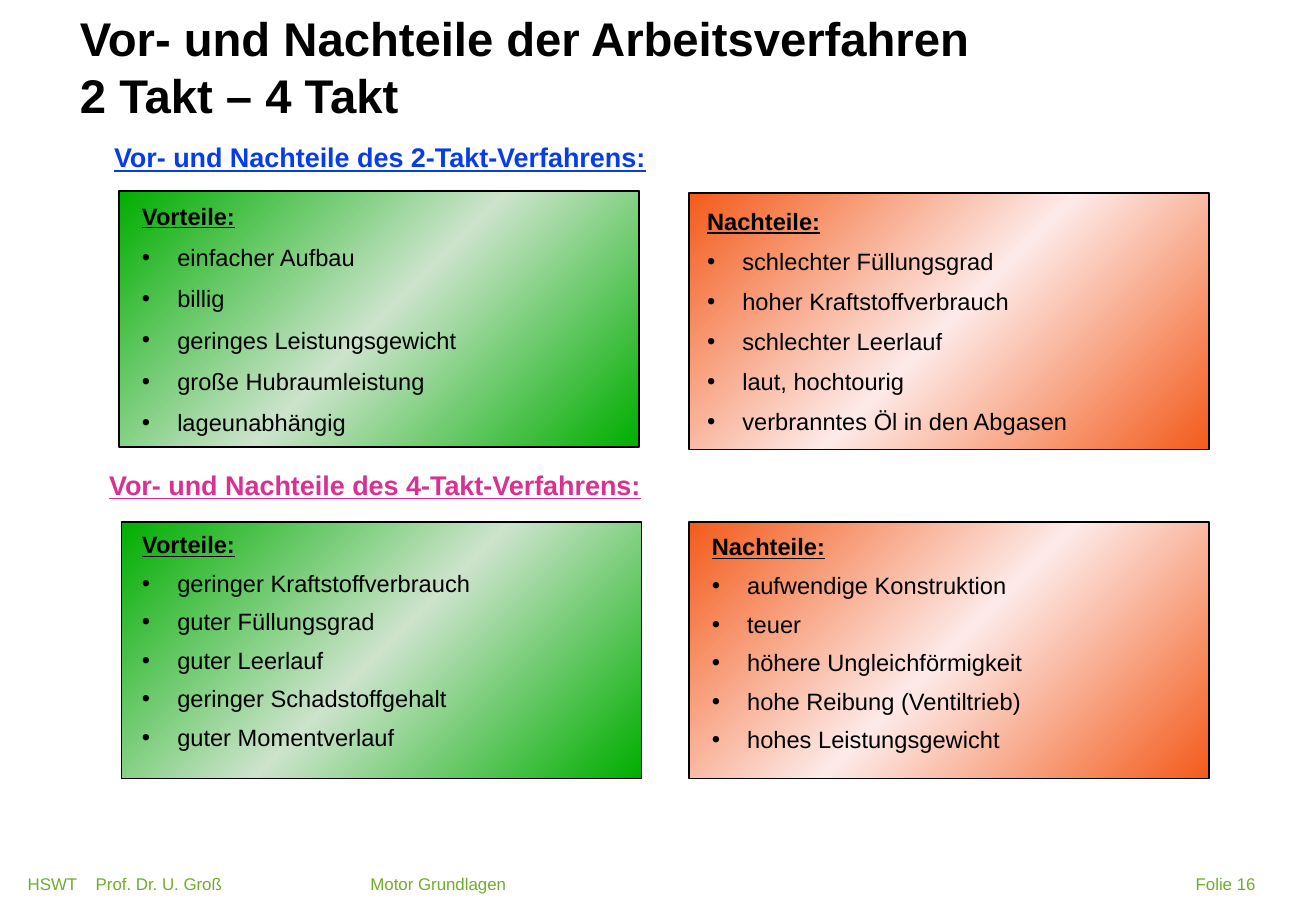
from copy import deepcopy

from lxml import etree
from pptx import Presentation
from pptx.dml.color import RGBColor
from pptx.enum.shapes import MSO_SHAPE
from pptx.enum.text import MSO_ANCHOR, PP_ALIGN
from pptx.oxml.ns import qn
from pptx.util import Inches, Pt

RECTANGLE = MSO_SHAPE.RECTANGLE
TOP, MIDDLE = MSO_ANCHOR.TOP, MSO_ANCHOR.MIDDLE
LEFT, RIGHT = PP_ALIGN.LEFT, PP_ALIGN.RIGHT

FONT = "Arial"
BLACK, BLUE, PINK, FOOTER_GREEN = "000000", "063DE8", "D93192", "71AD2A"
GREEN_GRADIENT = ("00AE00", "CCE3CC", "00AE00")
ORANGE_GRADIENT = ("F35B1B", "FDEAE8", "F35B1B")
PANEL_WIDTH, PANEL_HEIGHT = 4.28, 2.11
BULLET_INDENT = 0.29
BULLET_SPACE = 7.7

# Panel: left, top, text offset (x, y), line spacing, gradient, heading, points
PANELS = [
    (0.98, 1.57, 0.09, 0.04, 1.0, GREEN_GRADIENT, "Vorteile:",
     ["einfacher Aufbau", "billig", "geringes Leistungsgewicht",
      "große Hubraumleistung", "lageunabhängig"]),
    (5.67, 1.59, 0.05, 0.08, 0.95, ORANGE_GRADIENT, "Nachteile:",
     ["schlechter Füllungsgrad", "hoher Kraftstoffverbrauch",
      "schlechter Leerlauf", "laut, hochtourig",
      "verbranntes Öl in den Abgasen"]),
    (1.0, 4.3, 0.07, 0.04, 0.9, GREEN_GRADIENT, "Vorteile:",
     ["geringer Kraftstoffverbrauch", "guter Füllungsgrad", "guter Leerlauf",
      "geringer Schadstoffgehalt", "guter Momentverlauf"]),
    (5.67, 4.3, 0.09, 0.06, 0.9, ORANGE_GRADIENT, "Nachteile:",
     ["aufwendige Konstruktion", "teuer", "höhere Ungleichförmigkeit",
      "hohe Reibung (Ventiltrieb)", "hohes Leistungsgewicht"]),
]


def color(value):
    return RGBColor.from_string(value)


def add_frame(page, left, top, width, height, anchor=TOP):
    box = page.shapes.add_textbox(
        Inches(left), Inches(top), Inches(width), Inches(height))
    frame = box.text_frame
    frame.word_wrap = True
    frame.vertical_anchor = anchor
    return frame


def write(para, text, size=14, ink=BLACK, bold=False, underline=False,
          align=LEFT, line_spacing=1.0, space_before=0):
    para.text = text
    para.alignment = align
    para.line_spacing = line_spacing
    para.space_before = Pt(space_before)
    for span in para.runs:
        span.font.name = FONT
        span.font.size = Pt(size)
        span.font.bold = bold
        span.font.underline = underline
        span.font.color.rgb = color(ink)


def add_bullet(para):
    properties = para._p.get_or_add_pPr()
    properties.set("marL", str(Inches(BULLET_INDENT)))
    properties.set("indent", str(-Inches(BULLET_INDENT)))
    etree.SubElement(properties, qn("a:buFont")).set("typeface", FONT)
    etree.SubElement(properties, qn("a:buChar")).set("char", "•")


def add_tabs(para, stops):
    tabs = etree.SubElement(para._p.get_or_add_pPr(), qn("a:tabLst"))
    for stop in stops:
        tab = etree.SubElement(tabs, qn("a:tab"))
        tab.set("pos", str(Inches(stop)))
        tab.set("algn", "l")


def fill_gradient(shape, colors):
    shape.fill.gradient()
    shape.fill.gradient_angle = 315
    first = shape._element.spPr.find(".//" + qn("a:gs"))
    first.addnext(deepcopy(first))
    for index, (stop, value) in enumerate(zip(shape.fill.gradient_stops, colors)):
        stop.position = index / (len(colors) - 1)
        stop.color.rgb = color(value)


def add_title(page, left, top, width, height):
    frame = add_frame(page, left, top, width, height, anchor=MIDDLE)
    write(frame.paragraphs[0],
          "Vor- und Nachteile der Arbeitsverfahren\n2 Takt – 4 Takt",
          size=28, bold=True)


def add_heading(page, left, top, text, ink):
    frame = add_frame(page, left, top, 9.13, 0.36)
    write(frame.paragraphs[0], text, size=16, ink=ink, bold=True, underline=True)


def add_panel(page, left, top, shift_x, shift_y, line_spacing, gradient,
              heading, points):
    # Coloured background
    panel = page.shapes.add_shape(
        RECTANGLE, Inches(left), Inches(top),
        Inches(PANEL_WIDTH), Inches(PANEL_HEIGHT))
    panel.shadow.inherit = False
    fill_gradient(panel, gradient)
    panel.line.color.rgb = color(BLACK)
    panel.line.width = Pt(1)

    # Heading and bullet list
    frame = add_frame(page, left + shift_x, top + shift_y,
                      PANEL_WIDTH - 0.19, PANEL_HEIGHT - shift_y)
    write(frame.paragraphs[0], heading, bold=True, underline=True,
          line_spacing=line_spacing)
    for point in points:
        para = frame.add_paragraph()
        add_bullet(para)
        write(para, point, line_spacing=line_spacing, space_before=BULLET_SPACE)


def add_footer(page, left, top, right):
    number_width = 1.43
    frame = add_frame(page, right - number_width, top, number_width, 0.24)
    write(frame.paragraphs[0], "Folie 16", size=10, ink=FOOTER_GREEN, align=RIGHT)

    para = add_frame(page, left, top, 8.37, 0.24).paragraphs[0]
    add_tabs(para, [0.56, 2.82])
    write(para, "HSWT\tProf. Dr. U. Groß\tMotor Grundlagen",
          size=10, ink=FOOTER_GREEN)


def main():
    deck = Presentation()
    deck.slide_width, deck.slide_height = Inches(10.83), Inches(7.5)
    page = deck.slides.add_slide(deck.slide_layouts[6])

    add_title(page, 0.56, 0.21, 9.53, 0.67)
    add_heading(page, 0.84, 1.11, "Vor- und Nachteile des 2-Takt-Verfahrens:", BLUE)
    add_heading(page, 0.8, 3.81, "Vor- und Nachteile des 4-Takt-Verfahrens:", PINK)
    for panel in PANELS:
        add_panel(page, *panel)
    add_footer(page, 0.13, 7.14, 10.43)

    deck.save("out.pptx")


if __name__ == "__main__":
    main()
